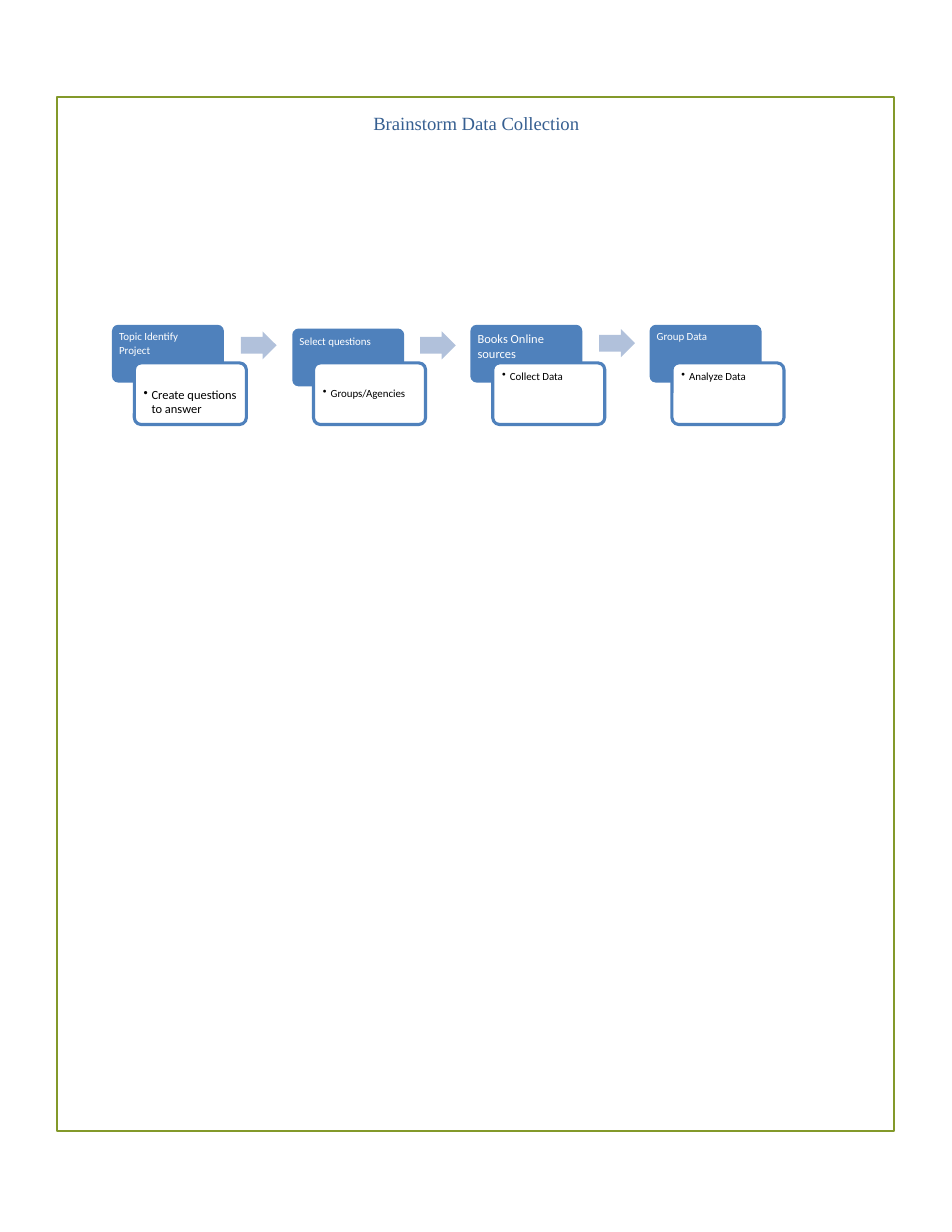
"""Builds a one-page flow of four data collection steps."""
import pptx
import pptx.dml.color
import pptx.enum.shapes
import pptx.util
from lxml import etree

Pt = pptx.util.Pt
SHAPE = pptx.enum.shapes.MSO_SHAPE
COLORS = {"frame": "83992A", "step": "4F81BC", "arrow": "B1C1DB",
          "title": "365F91", "white": "FFFFFF", "black": "000000"}
TITLE = "Brainstorm Data Collection"
STEPS = [
    {"head": ["Topic Identify", "Project"], "head_size": 7, "head_spacing": 9,
     "shift": (0, 0), "text_top": 211.3,
     "task": "Create questions to answer", "task_size": 8, "task_top": 249.5},
    {"head": ["Select questions"], "head_size": 7, "head_spacing": 9.2,
     "shift": (0.7, 2.4), "text_top": 214.2,
     "task": "Groups/Agencies", "task_size": 7, "task_top": 248},
    {"head": ["Books Online sources"], "head_size": 8, "head_spacing": 9.8,
     "shift": (0, 0), "text_top": 212.5,
     "task": "Collect Data", "task_size": 7, "task_top": 237.2},
    {"head": ["Group Data"], "head_size": 7, "head_spacing": 9.2,
     "shift": (0, 0), "text_top": 211.3,
     "task": "Analyze Data", "task_size": 7, "task_top": 237.2},
]
ARROW_TOPS = [213, 213, 211.6]
LEFT, TOP, PITCH = 72, 208.8, 115.2


def color(name):
    return pptx.dml.color.RGBColor.from_string(COLORS[name])


def add_block(page, kind, box, fill=None, line=None, width=2, adjustments=()):
    block = page.shapes.add_shape(kind, *map(Pt, box))
    block.shadow.inherit = False
    for number, value in enumerate(adjustments):
        block.adjustments[number] = value
    if fill:
        block.fill.solid()
        block.fill.fore_color.rgb = color(fill)
    else:
        block.fill.background()
    if line:
        block.line.color.rgb = color(line)
        block.line.width = Pt(width)
    else:
        block.line.fill.background()


def add_text(page, box, lines, ink, size, spacing, name="Calibri", bullet=False):
    frame = page.shapes.add_textbox(*map(Pt, box)).text_frame
    frame.word_wrap = True
    for side in ("left", "top", "right", "bottom"):
        setattr(frame, f"margin_{side}", 0)
    for number, line in enumerate(lines):
        para = frame.add_paragraph() if number else frame.paragraphs[0]
        properties = para._p.get_or_add_pPr()
        properties.set("marL", str(Pt(6 if bullet else 1)))
        properties.set("indent", str(Pt(-5 if bullet else 0)))
        para.line_spacing = Pt(spacing)
        if bullet:
            mark = etree.SubElement(properties, pptx.oxml.ns.qn("a:buChar"))
            mark.set("char", "•")
        span = para.add_run()
        span.text = line
        for key, value in {"name": name, "size": Pt(size)}.items():
            setattr(span.font, key, value)
        span.font.color.rgb = color(ink)


def main():
    deck = pptx.Presentation()
    deck.slide_width, deck.slide_height = Pt(612), Pt(792)
    page = deck.slides.add_slide(deck.slide_layouts[6])
    add_block(page, SHAPE.RECTANGLE, (36.7, 62.6, 537.8, 664.6),
              line="frame", width=1.25)
    add_text(page, (239, 73.4, 136, 13.7), [TITLE], "title", 12, 13.2,
             "Times New Roman")
    for number, step in enumerate(STEPS):
        left = LEFT + number * PITCH
        head_left, head_top = left + step["shift"][0], TOP + step["shift"][1]
        add_block(page, SHAPE.ROUNDED_RECTANGLE, (head_left, head_top, 72, 37.2),
                  fill="step", adjustments=[0.11])
        add_block(page, SHAPE.ROUNDED_RECTANGLE, (left + 14.4, 233.3, 72, 39.6),
                  fill="white", line="step", adjustments=[0.11])
        add_text(page, (head_left + 3.6, step["text_top"], 57, 19), step["head"],
                 "white", step["head_size"], step["head_spacing"])
        add_text(page, (left + 19.4, step["task_top"], 63, 19), [step["task"]],
                 "black", step["task_size"], 9, bullet=True)
    for number, top in enumerate(ARROW_TOPS):
        add_block(page, SHAPE.RIGHT_ARROW,
                  (LEFT + 82.8 + number * PITCH, top, 23, 18),
                  fill="arrow", adjustments=[0.6, 0.5])
    deck.save("out.pptx")


if __name__ == "__main__":
    main()
